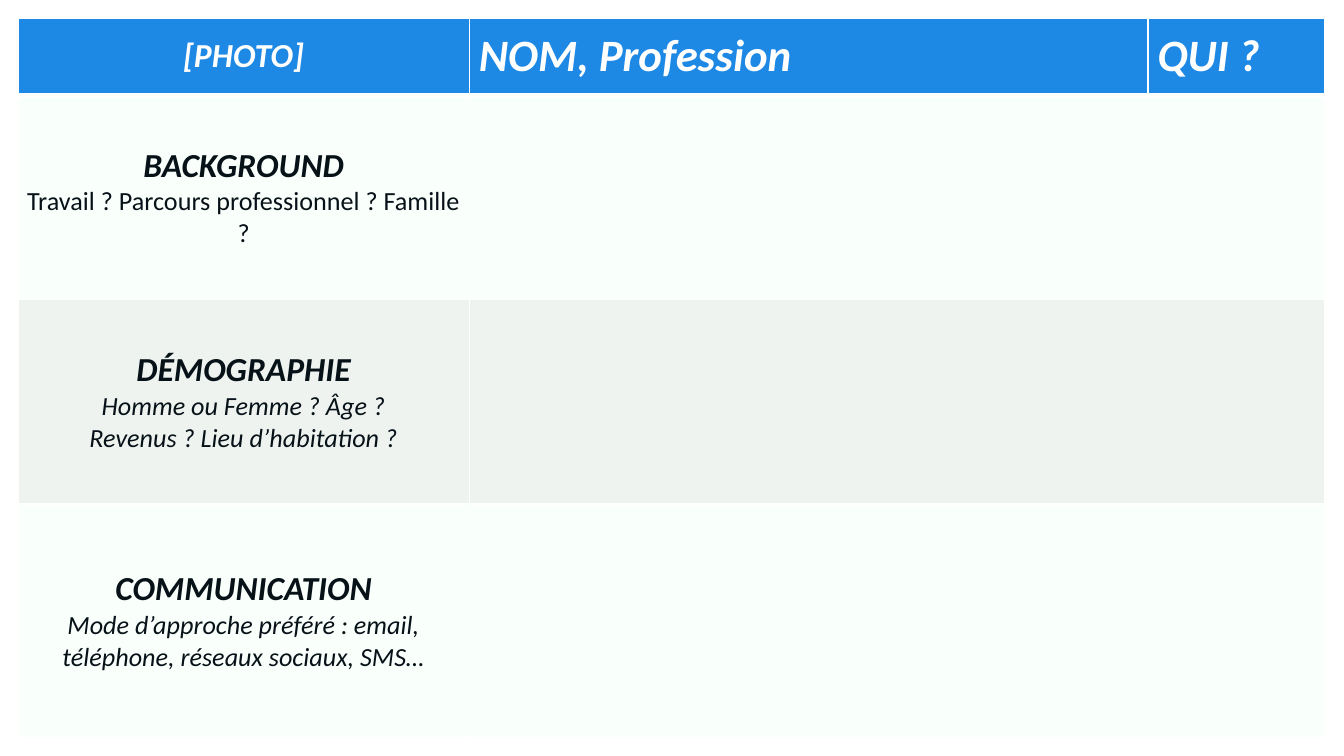
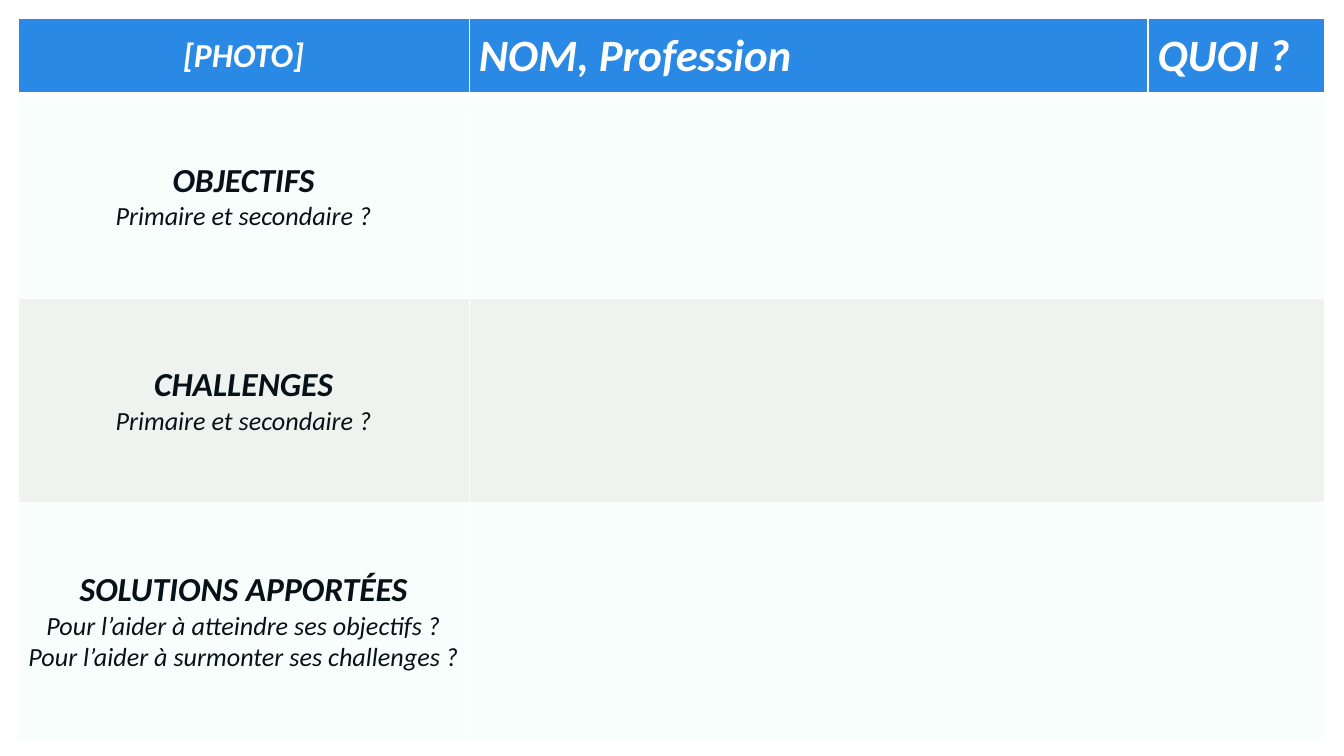
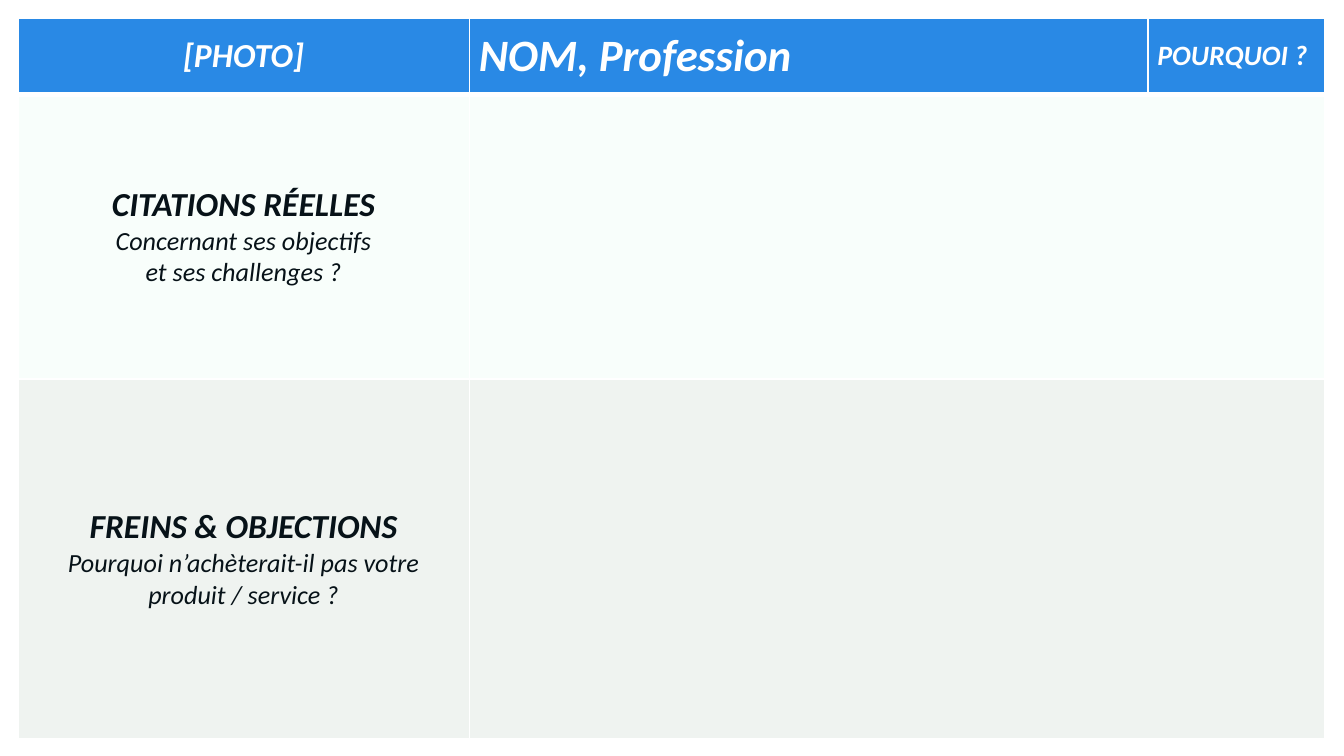
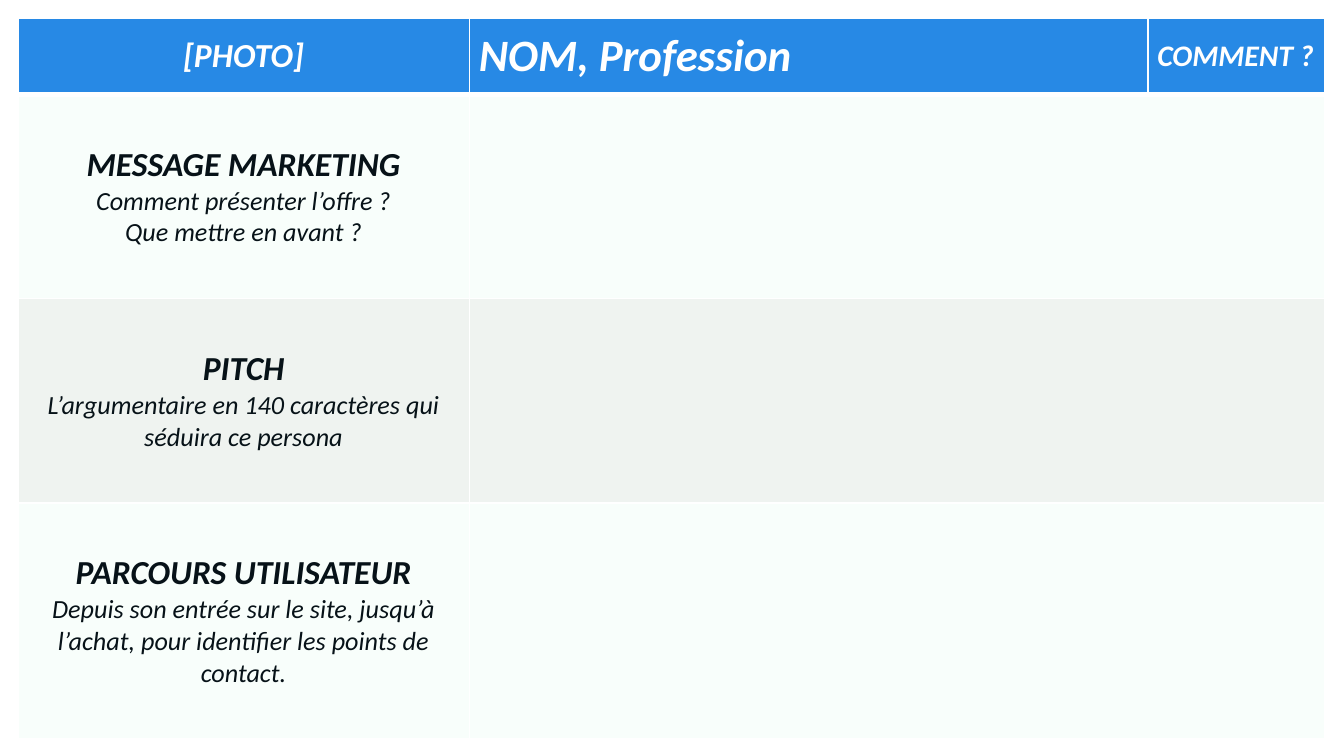
from copy import deepcopy
from dataclasses import dataclass

from lxml import etree
from pptx import Presentation
from pptx.dml.color import RGBColor
from pptx.enum.text import MSO_ANCHOR, PP_ALIGN
from pptx.oxml.ns import qn
from pptx.util import Pt

MIDDLE = MSO_ANCHOR.MIDDLE
LEFT = PP_ALIGN.LEFT
CENTER = PP_ALIGN.CENTER


@dataclass(frozen=True)
class Theme:
    font: str = "Calibri"
    white: str = "FFFFFF"
    ink: str = "071218"
    band: str = "EFF3F0"
    label_size: float = 18
    hint_size: float = 14
    name_size: float = 24
    rule: float = 1
    header_rule: float = 3


@dataclass(frozen=True)
class Topic:
    label: str
    hints: tuple[str, ...]
    height: float
    italic: bool = True


@dataclass(frozen=True)
class PersonaSheet:
    question: str
    topics: tuple[Topic, ...]
    header_height: float = 41
    question_size: float = 24
    accent: str = "2989E5"
    light: str = "F8FEFB"


THEME = Theme()
SLIDE_SIZE = (720, 405)
MARGIN = 9.5
COLUMNS = (242, 363.5, 95)
ROW = 109.5
CELL_FORMAT = {
    "vertical_anchor": MIDDLE,
    "margin_left": Pt(5),
    "margin_right": Pt(5),
    "margin_top": Pt(5),
    "margin_bottom": Pt(5),
}

SHEETS = (
    PersonaSheet(
        "QUI ?",
        (
            Topic("BACKGROUND", ("Travail ? Parcours professionnel ? Famille ?",), ROW, False),
            Topic("DÉMOGRAPHIE", ("Homme ou Femme ? Âge ?\nRevenus ? Lieu d’habitation ?",), ROW),
            Topic(
                "COMMUNICATION",
                ("Mode d’approche préféré : email, téléphone, réseaux sociaux, SMS…",),
                125.5,
            ),
        ),
        header_height=41.5,
        accent="1E88E5",
        light="F9FFFB",
    ),
    PersonaSheet(
        "QUOI ?",
        (
            Topic("OBJECTIFS", ("Primaire et secondaire ?",), ROW),
            Topic("CHALLENGES", ("Primaire et secondaire ?",), ROW),
            Topic(
                "SOLUTIONS APPORTÉES",
                (
                    "Pour l’aider à atteindre ses objectifs ?",
                    "Pour l’aider à surmonter ses challenges ?",
                ),
                127,
            ),
        ),
    ),
    PersonaSheet(
        "POURQUOI ?",
        (
            Topic("CITATIONS RÉELLES", ("Concernant ses objectifs\net ses challenges ?",), 152.5),
            Topic(
                "FREINS & OBJECTIONS",
                ("Pourquoi n’achèterait-il pas votre produit / service ?",),
                193,
            ),
        ),
        question_size=15,
    ),
    PersonaSheet(
        "COMMENT ?",
        (
            Topic("MESSAGE MARKETING", ("Comment présenter l’offre ?\nQue mettre en avant ?",), ROW),
            Topic("PITCH", ("L’argumentaire en 140 caractères qui séduira ce persona",), ROW),
            Topic(
                "PARCOURS UTILISATEUR",
                (
                    "Depuis son entrée sur le site, jusqu’à l’achat, "
                    "pour identifier les points de contact.",
                ),
                126.5,
            ),
        ),
        question_size=16,
        accent="2789E5",
    ),
)


def write(paragraph, text: str, size: float, color: str, align,
          bold: bool = True, italic: bool = True) -> None:
    paragraph.text = text
    paragraph.alignment = align
    font_format = {"name": THEME.font, "size": Pt(size), "bold": bold, "italic": italic}
    for run in paragraph.runs:
        for attribute, value in font_format.items():
            setattr(run.font, attribute, value)
        run.font.color.rgb = RGBColor.from_string(color)
    for line_break in paragraph._p.findall(qn("a:br")):
        line_break.append(deepcopy(paragraph.runs[0]._r.rPr))


def style_cell(cell, fill: str, borders: dict[str, float]) -> None:
    for attribute, value in CELL_FORMAT.items():
        setattr(cell, attribute, value)
    properties = cell._tc.get_or_add_tcPr()
    for side, width in borders.items():
        line = etree.SubElement(properties, qn(f"a:ln{side}"), w=str(Pt(width)))
        solid = etree.SubElement(line, qn("a:solidFill"))
        etree.SubElement(solid, qn("a:srgbClr"), val=THEME.white)
    cell.fill.solid()
    cell.fill.fore_color.rgb = RGBColor.from_string(fill)


def fill_header(table, sheet: PersonaSheet) -> None:
    borders = {"L": THEME.rule, "R": THEME.rule, "T": THEME.rule, "B": THEME.header_rule}
    headings = (
        ("[PHOTO]", THEME.label_size, CENTER),
        ("NOM, Profession", THEME.name_size, LEFT),
        (sheet.question, sheet.question_size, LEFT),
    )
    for column, (text, size, align) in enumerate(headings):
        cell = table.cell(0, column)
        style_cell(cell, sheet.accent, borders)
        write(cell.text_frame.paragraphs[0], text, size, THEME.white, align)


def fill_topic(table, row: int, topic: Topic, fill: str) -> None:
    borders = {"L": THEME.rule, "R": THEME.rule, "B": THEME.rule}
    for column in range(len(COLUMNS)):
        style_cell(table.cell(row, column), fill, borders)
    table.cell(row, 1).merge(table.cell(row, 2))
    frame = table.cell(row, 0).text_frame
    write(frame.paragraphs[0], topic.label, THEME.label_size, THEME.ink, CENTER)
    for hint in topic.hints:
        write(frame.add_paragraph(), hint, THEME.hint_size, THEME.ink, CENTER,
              bold=False, italic=topic.italic)


def add_sheet(deck, sheet: PersonaSheet) -> None:
    slide = deck.slides.add_slide(deck.slide_layouts[6])
    heights = (sheet.header_height, *(topic.height for topic in sheet.topics))
    table = slide.shapes.add_table(
        len(heights), len(COLUMNS), Pt(MARGIN), Pt(MARGIN), Pt(sum(COLUMNS)), Pt(sum(heights))
    ).table
    table.horz_banding = False
    for column, width in zip(table.columns, COLUMNS):
        column.width = Pt(width)
    for row, height in zip(table.rows, heights):
        row.height = Pt(height)
    fill_header(table, sheet)
    for row, topic in enumerate(sheet.topics, start=1):
        fill_topic(table, row, topic, sheet.light if row % 2 else THEME.band)


def main() -> None:
    deck = Presentation()
    deck.slide_width, deck.slide_height = map(Pt, SLIDE_SIZE)
    for sheet in SHEETS:
        add_sheet(deck, sheet)
    deck.save("out.pptx")


if __name__ == "__main__":
    main()
